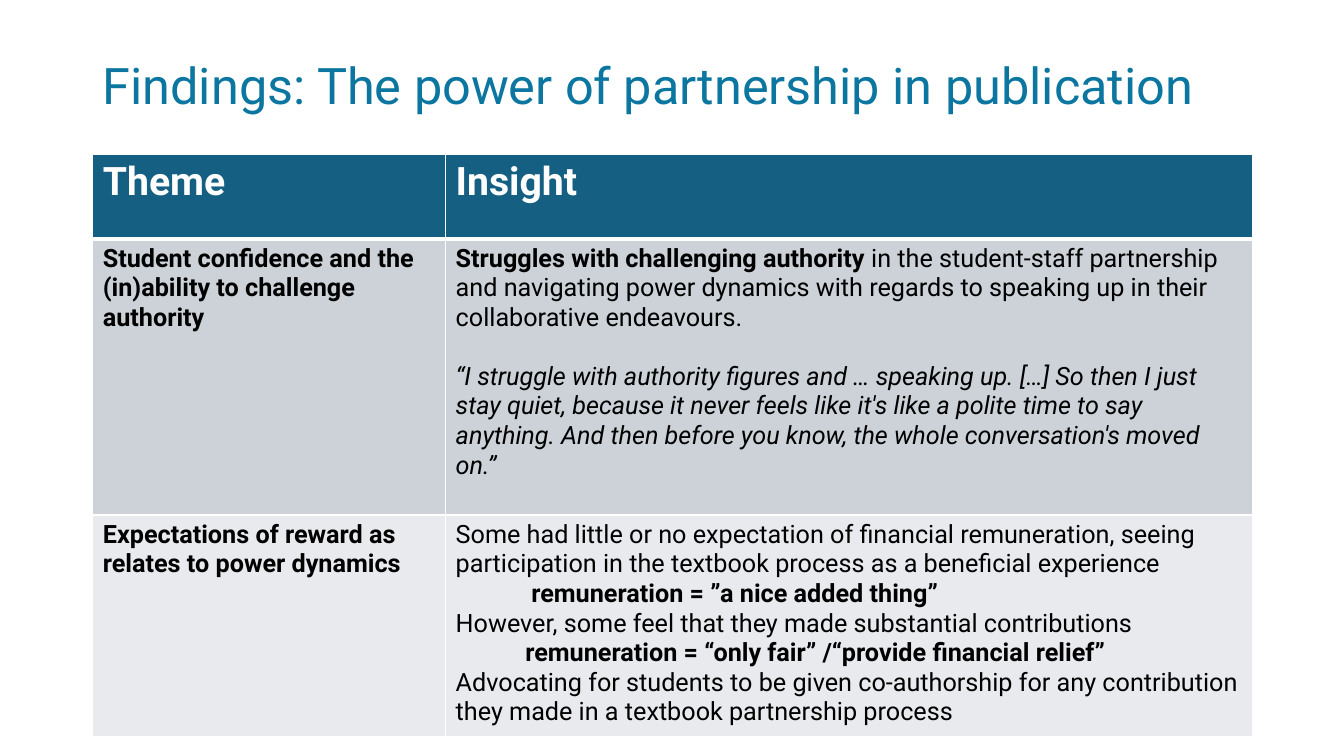
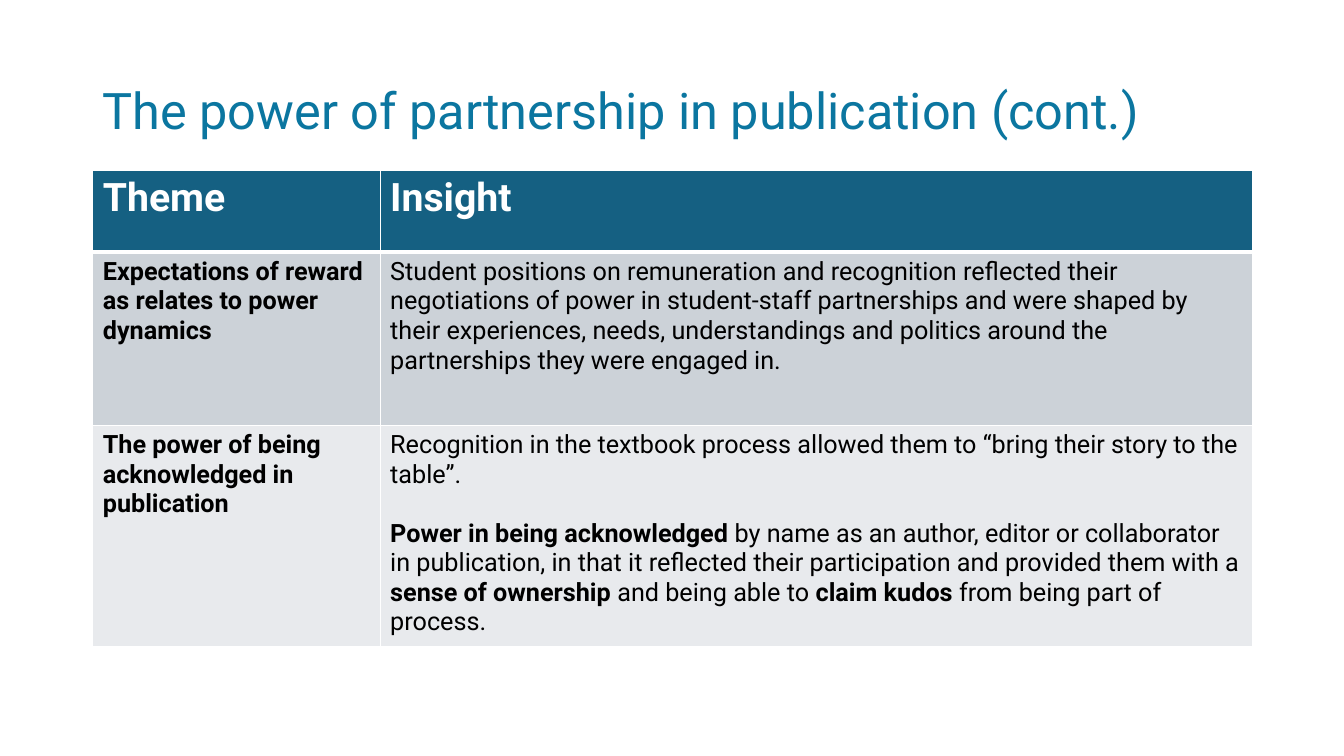
import pptx
import pptx.util
import pptx.dml.color
import pptx.enum.text
import lxml.etree
import dataclasses


@dataclasses.dataclass(frozen=True)
class Theme:
    font: str = "Roboto"
    title: str = "0B76A0"
    header: str = "156082"
    bands: tuple = ("CCD2D8", "E8EAED")
    text: str = "000000"
    white: str = "FFFFFF"
    title_pt: int = 36
    header_pt: int = 28
    body_pt: int = 18
    gap_pt: int = 21


theme = Theme()
inch = pptx.util.Inches
rgb = pptx.dml.color.RGBColor.from_string


def write(tf, text, size=theme.body_pt, color=theme.text, italic=False,
          before=0, indent=0, spacing=None):
    p = tf.paragraphs[0]
    if p.runs:
        p = tf.add_paragraph()
    if indent:
        p._p.get_or_add_pPr().set("marL", str(inch(indent)))
    if before:
        p.space_before = pptx.util.Pt(before)
    if spacing:
        p.line_spacing = spacing
    for i, part in enumerate(text.split("*")):
        if part:
            r = p.add_run()
            r.text = part
            r.font.name = theme.font
            r.font.size = pptx.util.Pt(size)
            r.font.color.rgb = rgb(color)
            r.font.bold = i % 2 == 1
            r.font.italic = italic


def border(cell, side, width):
    ln = lxml.etree.SubElement(cell._tc.get_or_add_tcPr(),
                               pptx.oxml.ns.qn("a:ln" + side),
                               w=str(pptx.util.Pt(width)))
    fill = lxml.etree.SubElement(ln, pptx.oxml.ns.qn("a:solidFill"))
    lxml.etree.SubElement(fill, pptx.oxml.ns.qn("a:srgbClr"), val=theme.white)


slides = [
    dict(
        title="Findings: The power of partnership in publication",
        title_height=0.96, top=1.53, theme_col=3.5, rows=(0.84, 2.74, 2.15),
        body=[
            ("*Student confidence and the (in)ability to challenge authority*", [
                ("*Struggles with challenging authority *in the student-staff partnership and navigating power dynamics with regards to speaking up in their collaborative endeavours.", {}),
                ("“I struggle with authority figures and … speaking up. […] So then I just stay quiet, because it never feels like it's like a polite time to say anything. And then before you know, the whole conversation's moved on.”",
                 dict(italic=True, before=theme.gap_pt)),
            ]),
            ("*Expectations of reward as relates to power dynamics*", [
                ("Some had little or no expectation of financial remuneration, seeing participation in the textbook process as a beneficial experience", {}),
                ("*remuneration = ”a nice added thing”*", dict(indent=0.75)),
                ("However, some feel that they made substantial contributions", {}),
                ("*remuneration = “only fair” /“provide financial relief”*", dict(indent=0.69)),
                ("Advocating for students to be given co-authorship for any contribution they made in a textbook partnership process", {}),
            ]),
        ],
    ),
    dict(
        title="The power of partnership in publication (cont.)",
        title_height=1.45, top=1.69, theme_col=2.85, rows=(0.81, 1.72, 2.15),
        body=[
            ("*Expectations of reward as relates to power dynamics*", [
                ("Student positions on remuneration and recognition reflected their negotiations of power in student-staff partnerships and were shaped by their experiences, needs, understandings and politics around the partnerships they were engaged in.", {}),
            ]),
            ("*The power of being acknowledged in publication*", [
                ("Recognition in the textbook process allowed them to “bring their story to the table”.", {}),
                ("*Power in being acknowledged *by name as an author, editor or collaborator in publication, in that it reflected their participation and provided them with a *sense of ownership *and being able to *claim kudos *from being part of process.",
                 dict(before=theme.gap_pt)),
            ]),
        ],
    ),
]

prs = pptx.Presentation()
prs.slide_width, prs.slide_height = inch(13.33), inch(7.5)
left, width = 0.92, 11.5

for page in slides:
    s = prs.slides.add_slide(prs.slide_layouts[6])

    sp = s.shapes.add_textbox(inch(left), inch(0.4), inch(width), inch(page["title_height"]))
    tf = sp.text_frame
    tf.word_wrap = True
    tf.vertical_anchor = pptx.enum.text.MSO_ANCHOR.MIDDLE
    write(tf, page["title"], size=theme.title_pt, color=theme.title, spacing=0.9)

    rows = page["rows"]
    table = s.shapes.add_table(len(rows), 2, inch(left), inch(page["top"]),
                               inch(width), inch(sum(rows))).table
    table.columns[0].width = inch(page["theme_col"])
    table.columns[1].width = inch(width - page["theme_col"])

    heading = dict(size=theme.header_pt, color=theme.white)
    content = [([("*Theme*", heading)], [("*Insight*", heading)])]
    content += [([(name, {})], insight) for name, insight in page["body"]]
    fills = (theme.header, *theme.bands)

    for i, (height, cells, fill) in enumerate(zip(rows, content, fills)):
        table.rows[i].height = inch(height)
        for j, paragraphs in enumerate(cells):
            cell = table.cell(i, j)
            for side in "LRTB":
                thick = (i, side) in ((0, "B"), (1, "T"))
                border(cell, side, 3 if thick else 1)
            cell.fill.solid()
            cell.fill.fore_color.rgb = rgb(fill)
            for text, fmt in paragraphs:
                write(cell.text_frame, text, **fmt)

prs.save("out.pptx")
